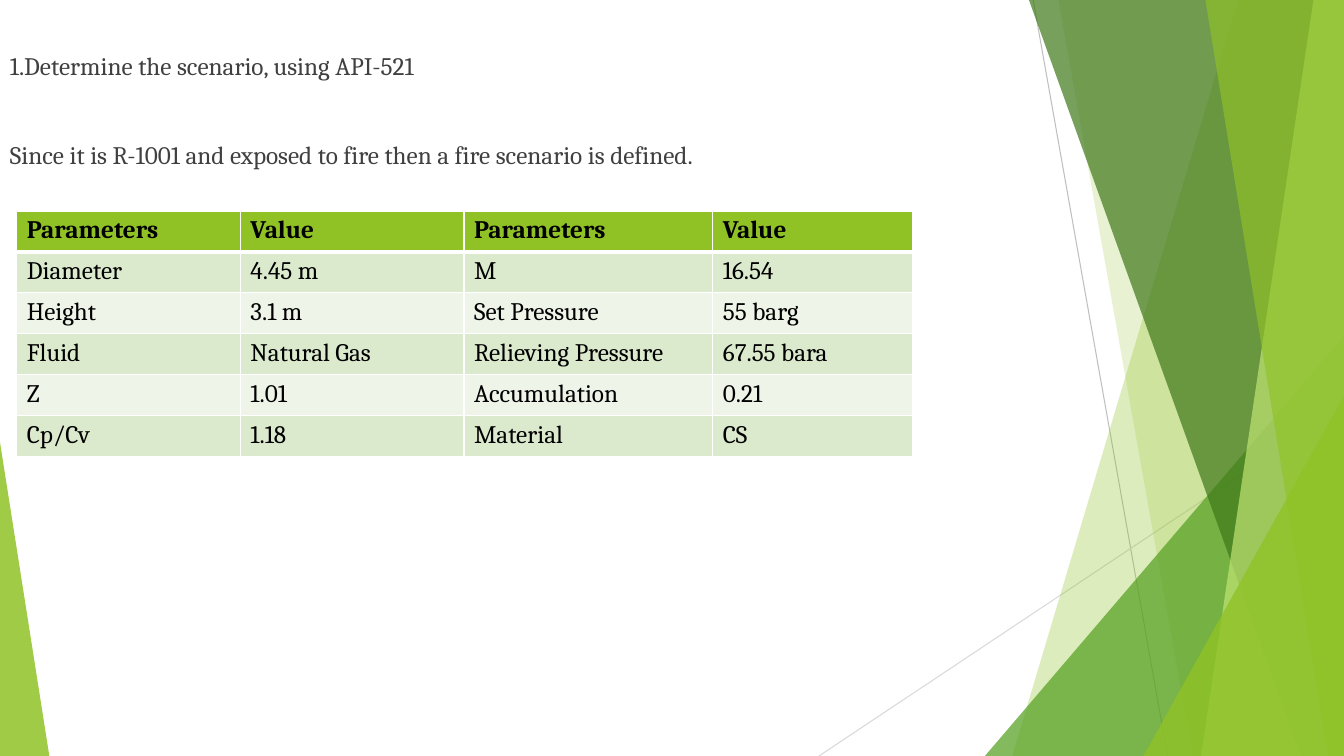
from lxml.etree import SubElement
from pptx import Presentation
from pptx.dml.color import RGBColor
from pptx.enum.shapes import MSO_CONNECTOR as Link, MSO_SHAPE as Kind
from pptx.oxml.ns import qn
from pptx.util import Pt

PX = 9525
WIDE, HIGH = 1280, 720
FONT = "Cambria"
WHITE = RGBColor(0xFF, 0xFF, 0xFF)
BLACK = RGBColor(0, 0, 0)
INK = RGBColor(0x40, 0x40, 0x40)
LIME = RGBColor(0x90, 0xC2, 0x26)
LEAF = RGBColor(0x54, 0xA0, 0x21)
MOSS = RGBColor(0x3F, 0x78, 0x19)
PEAR = RGBColor(0xC0, 0xE4, 0x74)
MINT = RGBColor(0xDB, 0xE9, 0xCD)
PALE = RGBColor(0xEE, 0xF4, 0xE8)
GRAY = RGBColor(0xBF, 0xBF, 0xBF)
MIST = RGBColor(0xD9, 0xD9, 0xD9)

LINES = [
    "1.Determine the scenario, using API-521",
    "Since it is R-1001 and exposed to fire then a fire scenario is defined.",
]
COLS = [213, 213, 237, 190]
ROWS = [
    ["Parameters", "Value", "Parameters", "Value"],
    ["Diameter", "4.45 m", "M", "16.54"],
    ["Height", "3.1 m", "Set Pressure", "55 barg"],
    ["Fluid", "Natural Gas", "Relieving Pressure", "67.55 bara"],
    ["Z", "1.01", "Accumulation", "0.21"],
    ["Cp/Cv", "1.18", "Material", "CS"],
]


def scale(*sizes):
    return [size * PX for size in sizes]


def write(para, text, color, bold=False):
    run = para.add_run()
    run.text = text
    run.font.name = FONT
    run.font.size = Pt(18)
    run.font.bold = bold
    run.font.color.rgb = color


def tint(shape, color, alpha):
    shape.shadow.inherit = False
    shape.line.fill.background()
    shape.fill.solid()
    shape.fill.fore_color.rgb = color
    tone = shape.fill._xPr.find(qn("a:solidFill"))[0]
    SubElement(tone, qn("a:alpha"), val=str(alpha * 1000))


def add_ray(slide, start, end, color):
    ray = slide.shapes.add_connector(Link.STRAIGHT, *scale(*start, *end))
    ray.line.color.rgb = color
    ray.line.width = Pt(0.75)
    SubElement(ray._element.spPr, qn("a:effectLst"))


def add_band(slide, box, top, base, color, alpha):
    left, head, wide, high = box
    right, foot = left + wide, head + high
    form = slide.shapes.build_freeform(left + top, head, scale=PX)
    form.add_line_segments([(right, head), (right, foot), (left + base, foot)])
    tint(form.convert_to_shape(), color, alpha)


def add_wedge(slide, box, tip, color, alpha):
    wedge = slide.shapes.add_shape(Kind.ISOSCELES_TRIANGLE, *scale(*box))
    wedge.adjustments[0] = tip
    tint(wedge, color, alpha)


def add_decor(slide, box):
    left, top, wide, high = box
    right, foot = left + wide, top + high
    add_ray(slide, (left + 46, top), (left + 174, foot), GRAY)
    add_ray(slide, (right, top + 387), (left - 158, foot), MIST)
    add_band(slide, box, 241, 26, LIME, 30)
    add_band(slide, box, 70, 198, LIME, 20)
    add_wedge(slide, (right - 342, foot - 400, 342, 400), 1, LEAF, 72)
    add_band(slide, box, 42, 301, MOSS, 70)
    add_band(slide, box, 313, 206, PEAR, 70)
    add_band(slide, box, 210, 327, LIME, 65)
    add_wedge(slide, (right - 191, foot - 343, 191, 343), 1, LIME, 80)


def add_notes(slide, box):
    frame = slide.shapes.add_textbox(*scale(*box)).text_frame
    frame.word_wrap = True
    for i, text in enumerate(LINES):
        para = frame.paragraphs[0] if i == 0 else frame.add_paragraph()
        para.space_before = Pt(42 if i else 0)
        write(para, text, INK)


def add_edges(cell, head):
    props = cell._tc.get_or_add_tcPr()
    for i, side in enumerate(("lnL", "lnR", "lnT", "lnB")):
        width = Pt(3 if head and side == "lnB" else 1)
        edge = props.makeelement(qn("a:" + side), {"w": str(width)})
        fill = SubElement(edge, qn("a:solidFill"))
        SubElement(fill, qn("a:srgbClr"), val=str(WHITE))
        props.insert(i, edge)


def add_grid(slide, box):
    frame = slide.shapes.add_table(len(ROWS), len(COLS), *scale(*box))
    grid = frame.table
    for col, wide in zip(grid.columns, COLS):
        col.width = wide * PX
    for r, row in enumerate(ROWS):
        grid.rows[r].height = box[3] * PX // len(ROWS)
        for c, text in enumerate(row):
            cell = grid.cell(r, c)
            cell.fill.solid()
            cell.fill.fore_color.rgb = LIME if r == 0 else MINT if r % 2 else PALE
            add_edges(cell, r == 0)
            write(cell.text_frame.paragraphs[0], text, BLACK, r == 0)


def main():
    deck = Presentation()
    deck.slide_width, deck.slide_height = scale(WIDE, HIGH)
    slide = deck.slides.add_slide(deck.slide_layouts[6])
    add_decor(slide, (938, 0, WIDE - 938, HIGH))
    add_wedge(slide, (0, 421, 47, 299), 0, LIME, 85)
    add_notes(slide, (0, 43, WIDE, 130))
    add_grid(slide, (16, 201, sum(COLS), 234))
    deck.save("out.pptx")


if __name__ == "__main__":
    main()
